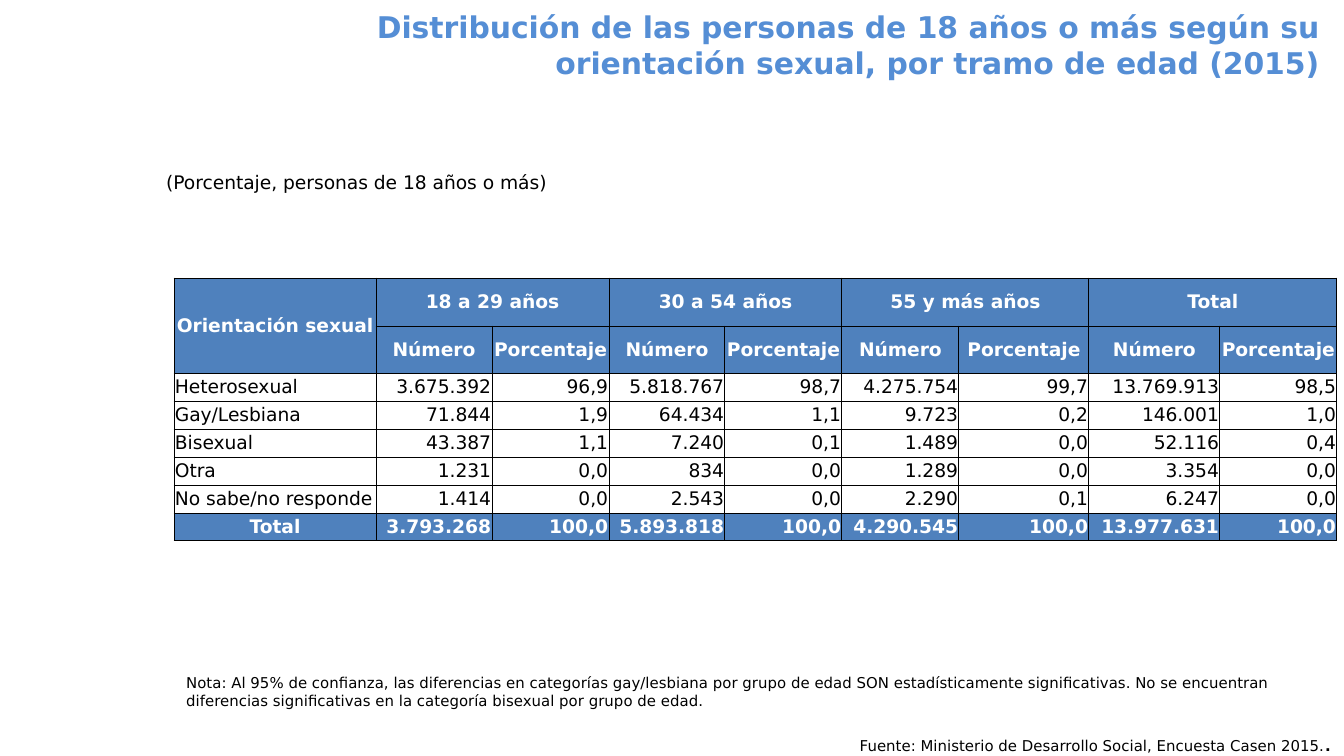
"""Build a slide with the distribution of sexual orientation by age group."""
import pptx
import pptx.dml.color
import pptx.enum.shapes
import pptx.enum.text
import pptx.oxml
import pptx.oxml.ns
import pptx.util

PIXELS_PER_INCH = 134.4
FONT = "DejaVu Sans"
COLORS = {"title": "558ED5", "header": "4F81BD", "text": "000000", "white": "FFFFFF"}
ALIGN = pptx.enum.text.PP_ALIGN
ANCHOR = pptx.enum.text.MSO_ANCHOR

COLUMN_WIDTHS = [202, 116, 117, 116, 117, 117, 130, 131, 117]
ROW_HEIGHTS = [48, 47] + [28] * 6
AGE_GROUPS = ["18 a 29 años", "30 a 54 años", "55 y más años", "Total"]
BODY_ROWS = [
    ["Heterosexual", "3.675.392", "96,9", "5.818.767", "98,7", "4.275.754", "99,7", "13.769.913", "98,5"],
    ["Gay/Lesbiana", "71.844", "1,9", "64.434", "1,1", "9.723", "0,2", "146.001", "1,0"],
    ["Bisexual", "43.387", "1,1", "7.240", "0,1", "1.489", "0,0", "52.116", "0,4"],
    ["Otra", "1.231", "0,0", "834", "0,0", "1.289", "0,0", "3.354", "0,0"],
    ["No sabe/no responde", "1.414", "0,0", "2.543", "0,0", "2.290", "0,1", "6.247", "0,0"],
    ["Total", "3.793.268", "100,0", "5.893.818", "100,0", "4.290.545", "100,0", "13.977.631", "100,0"],
]


def px(length):
    """Turn a length in px into EMU."""
    return pptx.util.Emu(round(length * 914400 / PIXELS_PER_INCH))


def color(name):
    """Return the named colour."""
    return pptx.dml.color.RGBColor.from_string(COLORS[name])


def format_text(text_frame, size, color_name, bold=False, alignment=ALIGN.LEFT):
    """Format every paragraph and run of a text frame."""
    for paragraph in text_frame.paragraphs:
        paragraph.alignment = alignment
        for run in paragraph.runs:
            run.font.name = FONT
            run.font.size = pptx.util.Pt(size)
            run.font.bold = bold
            run.font.color.rgb = color(color_name)


def add_title(slide, left, top, width, height):
    """Place the two-line title at the right of its box."""
    title = slide.shapes.title
    title.left, title.top, title.width, title.height = map(px, (left, top, width, height))
    text_frame = title.text_frame
    text_frame.text = ("Distribución de las personas de 18 años o más según su\n"
                       "orientación sexual, por tramo de edad (2015)")
    text_frame.word_wrap = True
    text_frame.auto_size = pptx.enum.text.MSO_AUTO_SIZE.NONE
    text_frame.vertical_anchor = ANCHOR.TOP
    text_frame.margin_top = px(9)
    text_frame.margin_right = px(24)
    format_text(text_frame, 16, "title", True, ALIGN.RIGHT)
    for paragraph in text_frame.paragraphs:
        paragraph.line_spacing = 1.0
        paragraph.space_before = pptx.util.Pt(0)


def add_text(slide, left, top, width, height, text, size):
    """Add a wrapped text box."""
    text_box = slide.shapes.add_textbox(*map(px, (left, top, width, height)))
    text_box.text_frame.word_wrap = True
    text_box.text_frame.text = text
    format_text(text_box.text_frame, size, "text")


def add_source(slide, left, top, width, height):
    """Add the white source strip at the foot of the slide."""
    strip = slide.shapes.add_shape(
        pptx.enum.shapes.MSO_SHAPE.RECTANGLE, *map(px, (left, top, width, height)))
    strip.shadow.inherit = False
    strip.fill.solid()
    strip.fill.fore_color.rgb = color("white")
    strip.line.fill.background()
    text_frame = strip.text_frame
    text_frame.word_wrap = True
    text_frame.vertical_anchor = ANCHOR.TOP
    text_frame.text = "Fuente: Ministerio de Desarrollo Social, Encuesta Casen 2015."
    final_stop = text_frame.paragraphs[0].add_run()
    final_stop.text = "."
    format_text(text_frame, 8, "text", alignment=ALIGN.RIGHT)
    final_stop.font.bold = True


def add_borders(cell):
    """Draw a thin line on the four sides of a cell."""
    properties = cell._tc.get_or_add_tcPr()
    for side in ("lnL", "lnR", "lnT", "lnB"):
        properties.append(pptx.oxml.parse_xml(
            f'<a:{side} {pptx.oxml.ns.nsdecls("a")} w="6350"><a:solidFill>'
            f'<a:srgbClr val="{COLORS["text"]}"/></a:solidFill></a:{side}>'))


def format_cell(cell, text, highlighted, alignment):
    """Fill a cell with its text, borders and colours."""
    cell.text_frame.text = text
    cell.vertical_anchor = ANCHOR.MIDDLE
    cell.margin_left = cell.margin_right = cell.margin_top = px(1)
    cell.margin_bottom = px(0)
    add_borders(cell)
    if highlighted:
        cell.fill.solid()
        cell.fill.fore_color.rgb = color("header")
    else:
        cell.fill.background()
    format_text(cell.text_frame, 10, "white" if highlighted else "text", highlighted, alignment)


def add_orientation_table(slide, left, top):
    """Add the table with a two-level header and a total row."""
    group_row = ["Orientación sexual"] + [text for group in AGE_GROUPS for text in (group, "")]
    measure_row = [""] + ["Número", "Porcentaje"] * len(AGE_GROUPS)
    rows = [group_row, measure_row] + BODY_ROWS
    table = slide.shapes.add_table(
        len(rows), len(COLUMN_WIDTHS), px(left), px(top),
        px(sum(COLUMN_WIDTHS)), px(sum(ROW_HEIGHTS))).table
    table.first_row = table.horz_banding = False
    for column, width in zip(table.columns, COLUMN_WIDTHS):
        column.width = px(width)
    for row, height in zip(table.rows, ROW_HEIGHTS):
        row.height = px(height)
    last_row = len(rows) - 1
    for row_index, texts in enumerate(rows):
        is_header = row_index < 2
        highlighted = is_header or row_index == last_row
        for column_index, text in enumerate(texts):
            if is_header or (highlighted and column_index == 0):
                alignment = ALIGN.CENTER
            else:
                alignment = ALIGN.RIGHT if column_index else ALIGN.LEFT
            format_cell(table.cell(row_index, column_index), text, highlighted, alignment)
    table.cell(0, 0).merge(table.cell(1, 0))
    for column_index in range(1, len(COLUMN_WIDTHS), 2):
        table.cell(0, column_index).merge(table.cell(0, column_index + 1))


def main():
    """Build and save the presentation."""
    presentation = pptx.Presentation()
    presentation.slide_width = px(1344)
    presentation.slide_height = px(756)
    slide = presentation.slides.add_slide(presentation.slide_layouts[5])
    add_title(slide, 148, 0, 1196, 113)
    add_source(slide, 645, 730, 699, 23)
    add_text(slide, 153, 164, 421, 36, "(Porcentaje, personas de 18 años o más)", 10)
    add_orientation_table(slide, 174, 278)
    add_text(slide, 173, 667, 1150, 50,
             "Nota: Al 95% de confianza, las diferencias en categorías gay/lesbiana por grupo "
             "de edad SON estadísticamente significativas. No se encuentran diferencias "
             "significativas en la categoría bisexual por grupo de edad.", 8)
    presentation.save("out.pptx")


if __name__ == "__main__":
    main()
